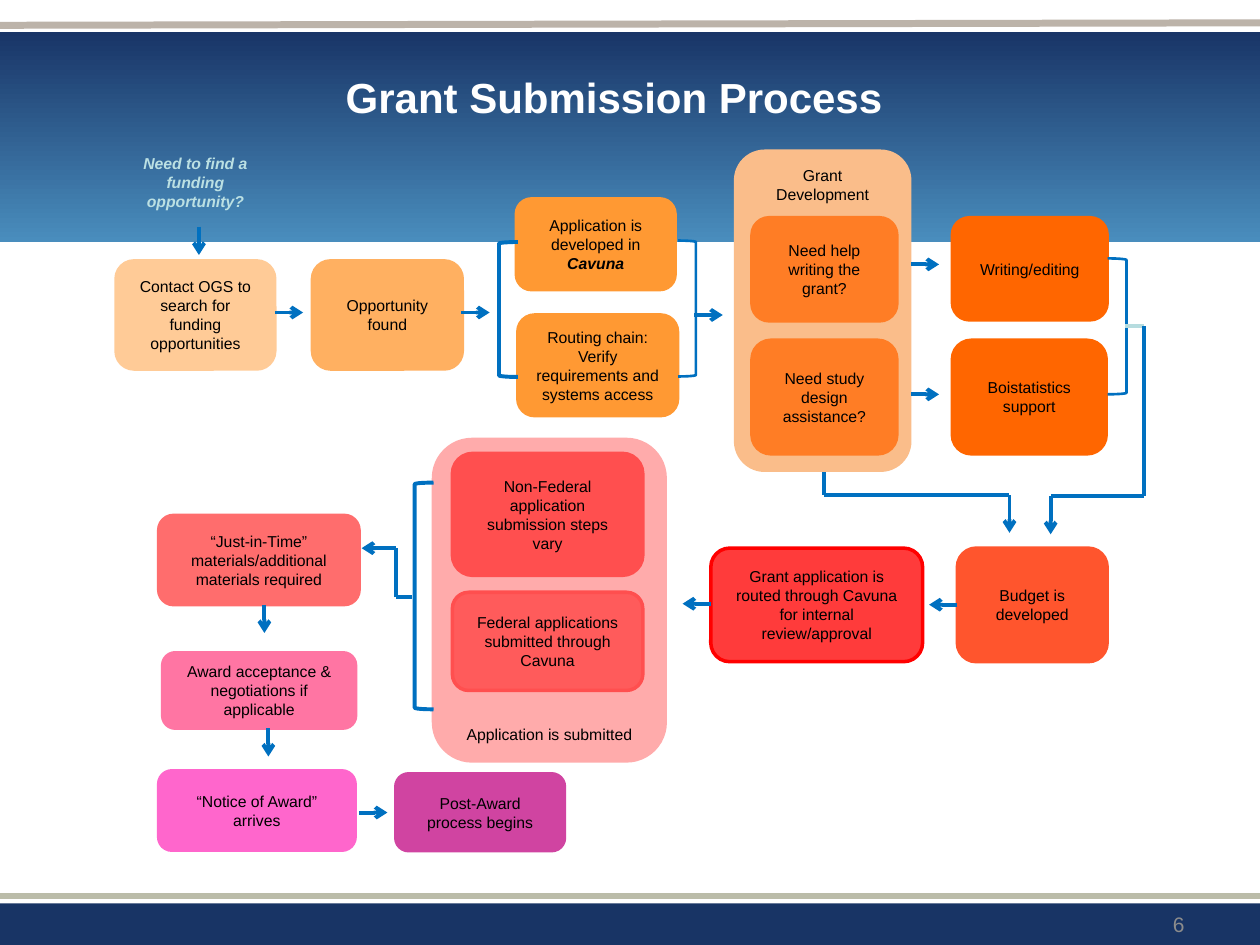
from lxml.etree import SubElement
from pptx import Presentation
from pptx.dml.color import RGBColor
from pptx.enum.shapes import MSO_CONNECTOR as Link, MSO_SHAPE as Shape
from pptx.enum.text import MSO_ANCHOR as Anchor, MSO_AUTO_SIZE as Fit, PP_ALIGN as Align
from pptx.oxml.ns import qn
from pptx.util import Cm, Pt

BLACK = RGBColor(0x00, 0x00, 0x00)
WHITE = RGBColor(0xFF, 0xFF, 0xFF)
GRAY = RGBColor(0x8C, 0x8C, 0x8C)
NAVY = RGBColor(0x18, 0x34, 0x65)
DUSK = RGBColor(0x19, 0x35, 0x67)
SKY = RGBColor(0x49, 0x8D, 0xBD)
SAGE = RGBColor(0xBB, 0xBC, 0xA9)
SAND = RGBColor(0xBC, 0xB3, 0xA9)
BLUE = RGBColor(0x00, 0x70, 0xC0)
MIST = RGBColor(0xBB, 0xE0, 0xE3)
PALE = RGBColor(0xB6, 0xDC, 0xDF)
PEACH = RGBColor(0xFA, 0xBD, 0x8A)
CREAM = RGBColor(0xFF, 0xCB, 0x97)
MELON = RGBColor(0xFF, 0xB0, 0x61)
AMBER = RGBColor(0xFF, 0x99, 0x33)
CARROT = RGBColor(0xFF, 0x7D, 0x25)
ORANGE = RGBColor(0xFF, 0x66, 0x00)
RUST = RGBColor(0xFF, 0x55, 0x2D)
SCARLET = RGBColor(0xFF, 0x3B, 0x3B)
RED = RGBColor(0xFF, 0x00, 0x00)
BLUSH = RGBColor(0xFF, 0xAB, 0xAB)
CORAL = RGBColor(0xFF, 0x4F, 0x4F)
SALMON = RGBColor(0xFF, 0x5B, 0x5B)
ROSE = RGBColor(0xFF, 0x6D, 0x6D)
PINK = RGBColor(0xFF, 0x75, 0xA3)
ORCHID = RGBColor(0xFF, 0x66, 0xCC)
PLUM = RGBColor(0xD0, 0x44, 0xA1)

STEPS = [
    (2.34, 5.26, 3.2, 2.18, CREAM, "Contact OGS to search for funding opportunities"),
    (6.3, 5.26, 3.02, 2.18, MELON, "Opportunity found"),
    (10.44, 6.35, 3.22, 2.03, AMBER, "Routing chain: Verify requirements and systems access"),
    (15.16, 4.39, 2.92, 2.08, CARROT, "Need help writing the grant?"),
    (15.16, 6.86, 2.92, 2.29, CARROT, "Need study design assistance?"),
    (19.2, 4.39, 3.12, 2.06, ORANGE, "Writing/editing"),
    (19.2, 6.86, 3.1, 2.29, ORANGE, "Boistatistics support"),
    (19.3, 11.05, 3.02, 2.29, RUST, "Budget is developed"),
    (9.12, 9.14, 3.84, 2.46, CORAL, "Non-Federal application submission steps vary"),
    (3.2, 10.39, 4.04, 1.8, ROSE, "“Just-in-Time” materials/additional materials required"),
    (3.28, 13.16, 3.89, 1.52, PINK, "Award acceptance & negotiations if applicable"),
    (3.2, 15.54, 3.96, 1.6, ORCHID, "“Notice of Award” arrives"),
    (7.98, 15.6, 3.4, 1.55, PLUM, "Post-Award process begins"),
]
ARROWS = [
    (4.01, 4.57, 0, 1), (5.54, 6.3, 1, 0), (9.3, 6.3, 1, 0), (14, 6.35, 1, 0),
    (18.36, 5.33, 1, 0), (18.36, 7.95, 1, 0), (19.3, 12.19, -1, 0),
    (14.33, 12.17, -1, 0), (5.33, 12.19, 0, 1), (5.41, 14.68, 0, 1),
    (7.24, 16.38, 1, 0),
]
BRACKETS = [
    (Shape.LEFT_BRACKET, 10.06, 4.88, 0.38, 2.72, 2.25),
    (Shape.RIGHT_BRACKET, 13.67, 4.85, 0.36, 2.74, 1.5),
    (Shape.RIGHT_BRACKET, 22.33, 5.21, 0.38, 2.74, 1.5),
    (Shape.LEFT_BRACKET, 8.36, 9.73, 0.38, 4.57, 2.25),
]
REACH = 0.57


def add_run(para, text, size=9, color=BLACK, bold=False, slant=False):
    run = para.add_run()
    run.text = text
    font = run.font
    font.name = "Arial"
    font.size = Pt(size)
    font.bold = bold
    font.italic = slant
    font.color.rgb = color


def set_frame(frame, anchor):
    frame.word_wrap = True
    frame.auto_size = Fit.NONE
    frame.vertical_anchor = anchor


def add_plain(slide, kind, x, y, w, h):
    shape = slide.shapes.add_shape(kind, Cm(x), Cm(y), Cm(w), Cm(h))
    shape.shadow.inherit = False
    return shape


def add_box(slide, x, y, w, h, fill, text, edge=None, anchor=Anchor.MIDDLE, stress=None):
    box = add_plain(slide, Shape.ROUNDED_RECTANGLE, x, y, w, h)
    box.fill.solid()
    box.fill.fore_color.rgb = fill
    box.line.color.rgb = edge or fill
    box.line.width = Pt(2)
    set_frame(box.text_frame, anchor)
    para = box.text_frame.paragraphs[0]
    para.alignment = Align.CENTER
    add_run(para, text)
    if stress:
        add_run(para, stress, bold=True, slant=True)


def add_line(slide, start, end, color=BLUE, width=2.25, arrow=False):
    line = slide.shapes.add_connector(
        Link.STRAIGHT, *(Cm(value) for value in (*start, *end)))
    line.line.color.rgb = color
    line.line.width = Pt(width)
    if arrow:
        SubElement(line.line._get_or_add_ln(), qn("a:tailEnd"), type="arrow")
    SubElement(line._element.spPr, qn("a:effectLst"))


def add_route(slide, *points):
    last = len(points) - 2
    for index, (start, end) in enumerate(zip(points, points[1:])):
        add_line(slide, start, end, arrow=index == last)


def add_bracket(slide, kind, x, y, w, h, width):
    shape = add_plain(slide, kind, x, y, w, h)
    shape.fill.background()
    shape.line.color.rgb = BLUE
    shape.line.width = Pt(width)


def add_label(slide, x, y, w, h, lines, align, anchor=Anchor.TOP, **style):
    frame = slide.shapes.add_textbox(Cm(x), Cm(y), Cm(w), Cm(h)).text_frame
    set_frame(frame, anchor)
    for index, text in enumerate(lines):
        para = frame.add_paragraph() if index else frame.paragraphs[0]
        para.alignment = align
        add_run(para, text, **style)


def add_bands(slide):
    foot = add_plain(slide, Shape.RECTANGLE, 0, 18.21, 25.4, 0.84)
    foot.fill.solid()
    foot.fill.fore_color.rgb = NAVY
    foot.line.fill.background()
    add_line(slide, (0, 18.06), (25.4, 18.06), SAGE, 3)
    head = add_plain(slide, Shape.RECTANGLE, 0, 0.64, 25.4, 4.24)
    head.fill.gradient()
    head.fill.gradient_angle = 270
    for stop, color in zip(head.fill.gradient_stops, (DUSK, SKY)):
        stop.color.rgb = color
    head.line.fill.background()
    add_line(slide, (0, 0.51), (25.4, 0.46), SAND, 4)


def set_title(slide, text):
    title = slide.shapes.title
    title.left, title.top, title.width, title.height = Cm(5), Cm(1.32), Cm(14.76), Cm(1.27)
    set_frame(title.text_frame, Anchor.MIDDLE)
    para = title.text_frame.paragraphs[0]
    para.alignment = Align.CENTER
    add_run(para, text, 24, WHITE, bold=True)
    slide.shapes._spTree.append(title._element)


def main():
    deck = Presentation()
    deck.slide_width, deck.slide_height = Cm(25.4), Cm(19.05)
    slide = deck.slides.add_slide(deck.slide_layouts[5])
    add_bands(slide)
    set_title(slide, "Grant Submission Process")
    add_route(slide, (16.61, 9.14), (16.61, 9.98), (20.35, 9.98), (20.35, 10.74))
    add_box(slide, 14.83, 3.05, 3.51, 6.43, PEACH, "Grant Development", anchor=Anchor.TOP)
    add_box(slide, 8.74, 8.86, 4.67, 6.48, BLUSH, "Application is submitted",
            anchor=Anchor.BOTTOM)
    add_label(slide, 2.34, 2.97, 3.2, 1.7, ["Need to find a funding", "opportunity?"],
              Align.CENTER, color=MIST, bold=True, slant=True)
    add_box(slide, 10.41, 4.01, 3.2, 1.83, AMBER, "Application is developed in ",
            stress="Cavuna")
    for step in STEPS:
        add_box(slide, *step)
    add_box(slide, 14.33, 11.05, 4.27, 2.29, SCARLET,
            "Grant application is routed through Cavuna for internal review/approval", RED)
    add_box(slide, 9.12, 11.94, 3.84, 1.98, SALMON,
            "Federal applications submitted through Cavuna", CORAL)
    for bracket in BRACKETS:
        add_bracket(slide, *bracket)
    for x, y, across, down in ARROWS:
        add_route(slide, (x, y), (x + across * REACH, y + down * REACH))
    add_line(slide, (22.68, 6.58), (23.06, 6.58), PALE)
    add_route(slide, (23.06, 6.58), (23.06, 10), (21.18, 10), (21.18, 10.77))
    add_route(slide, (8.31, 12.04), (7.98, 12.04), (7.98, 11.05), (7.29, 11.05))
    add_label(slide, 22.23, 18.21, 1.9, 0.84, ["6"], Align.RIGHT, Anchor.MIDDLE,
              size=12, color=GRAY)
    deck.save("out.pptx")


if __name__ == "__main__":
    main()
